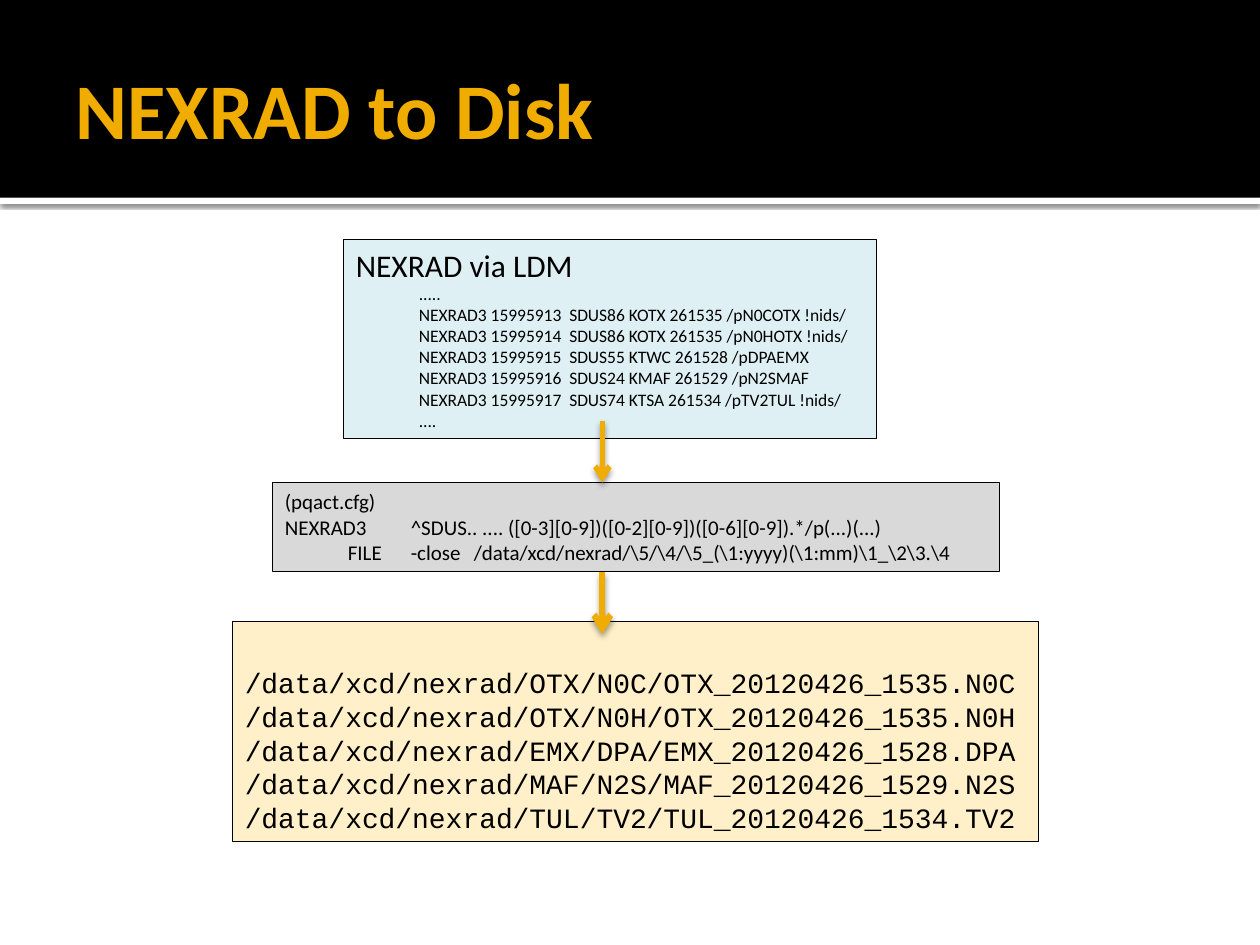
from dataclasses import dataclass

from lxml.etree import SubElement
from pptx import Presentation
from pptx.dml.color import RGBColor
from pptx.enum.shapes import MSO_CONNECTOR as Connector, MSO_SHAPE as Shape
from pptx.enum.text import MSO_ANCHOR as Anchor, MSO_AUTO_SIZE as AutoSize, PP_ALIGN as Align
from pptx.oxml.ns import qn
from pptx.util import Pt

COLORS = {
    "black": "000000",
    "white": "FFFFFF",
    "gold": "F0AD00",
    "feed": "DFF0F5",
    "config": "D9D9D9",
    "disk": "FFF0C9",
}


@dataclass(frozen=True)
class Line:
    text: str
    size: float
    font: str = "Calibri"
    indent: float = 0


@dataclass(frozen=True)
class Stage:
    left: float
    top: float
    width: float
    height: float
    color: str
    lines: list[Line]
    top_inset: float = 3.6
    tabs: tuple[float, ...] = ()


@dataclass(frozen=True)
class Flow:
    x: float
    top: float
    bottom: float
    weight: float


@dataclass(frozen=True)
class Shadow:
    opacity: int
    blur: float
    distance: float


def rgb(name: str) -> RGBColor:
    return RGBColor.from_string(COLORS[name])


def add_shadow(sp_pr, shadow: Shadow) -> None:
    effects = sp_pr.find(qn("a:effectLst"))
    if effects is None:
        effects = SubElement(sp_pr, qn("a:effectLst"))
    outer = SubElement(effects, qn("a:outerShdw"), blurRad=str(Pt(shadow.blur)),
                       dist=str(Pt(shadow.distance)), dir="5400000", rotWithShape="0")
    color = SubElement(outer, qn("a:srgbClr"), val=COLORS["black"])
    SubElement(color, qn("a:alpha"), val=str(shadow.opacity * 1000))


def add_rect(slide, left: float, top: float, width: float, height: float, color: str):
    rect = slide.shapes.add_shape(Shape.RECTANGLE, Pt(left), Pt(top), Pt(width), Pt(height))
    rect.shadow.inherit = False
    rect.fill.solid()
    rect.fill.fore_color.rgb = rgb(color)
    rect.line.fill.background()
    return rect


def add_run(paragraph, text: str, size: float, color: str, font: str = "Calibri", bold: bool = False) -> None:
    run = paragraph.add_run()
    run.text = text
    run.font.name = font
    run.font.size = Pt(size)
    run.font.bold = bold
    run.font.color.rgb = rgb(color)


def add_stage(slide, stage: Stage) -> None:
    box = add_rect(slide, stage.left, stage.top, stage.width, stage.height, stage.color)
    box.line.color.rgb = rgb("black")
    box.line.width = Pt(0.75)
    frame = box.text_frame
    frame.word_wrap = True
    frame.vertical_anchor = Anchor.TOP
    frame.margin_left = frame.margin_right = Pt(7.2)
    frame.margin_top, frame.margin_bottom = Pt(stage.top_inset), Pt(3.6)
    for index, line in enumerate(stage.lines):
        paragraph = frame.add_paragraph() if index else frame.paragraphs[0]
        paragraph.alignment = Align.LEFT
        properties = paragraph._p.get_or_add_pPr()
        if line.indent:
            paragraph.level = 1
            properties.set("marL", str(Pt(line.indent)))
            properties.set("indent", "0")
        if stage.tabs:
            stops = SubElement(properties, qn("a:tabLst"))
            for position in stage.tabs:
                SubElement(stops, qn("a:tab"), pos=str(Pt(position)), algn="l")
        add_run(paragraph, line.text, line.size, "black", line.font)


def add_flow(slide, flow: Flow) -> None:
    arrow = slide.shapes.add_connector(
        Connector.STRAIGHT, Pt(flow.x), Pt(flow.top), Pt(flow.x), Pt(flow.bottom))
    arrow.line.color.rgb = rgb("gold")
    arrow.line.width = Pt(flow.weight)
    sp_pr = arrow.element.spPr
    SubElement(sp_pr.find(qn("a:ln")), qn("a:tailEnd"), type="arrow")
    add_shadow(sp_pr, Shadow(38, 3.5, 2))


def add_header(slide, text: str) -> None:
    rule = add_rect(slide, 0, 113, 720, 3.6, "white")
    add_shadow(rule.element.spPr, Shadow(60, 2.5, 0.8))
    add_rect(slide, 0, 0, 720, 113, "black")
    title = slide.shapes.title
    title.element.getparent().append(title.element)
    title.left, title.top, title.width, title.height = Pt(36), Pt(12.24), Pt(648), Pt(98.64)
    frame = title.text_frame
    frame.auto_size = AutoSize.NONE
    frame.vertical_anchor = Anchor.MIDDLE
    frame.margin_left = Pt(7.2)
    frame.margin_top = frame.margin_right = frame.margin_bottom = Pt(3.6)
    frame.paragraphs[0].alignment = Align.LEFT
    add_run(frame.paragraphs[0], text, 45, "gold", bold=True)


FEED = [
    ".....",
    "NEXRAD3 15995913  SDUS86 KOTX 261535 /pN0COTX !nids/",
    "NEXRAD3 15995914  SDUS86 KOTX 261535 /pN0HOTX !nids/",
    "NEXRAD3 15995915  SDUS55 KTWC 261528 /pDPAEMX",
    "NEXRAD3 15995916  SDUS24 KMAF 261529 /pN2SMAF",
    "NEXRAD3 15995917  SDUS74 KTSA 261534 /pTV2TUL !nids/",
    "....",
]
CONFIG = [
    "(pqact.cfg)",
    "NEXRAD3\t^SDUS.. .... ([0-3][0-9])([0-2][0-9])([0-6][0-9]).*/p(...)(...)",
    "\tFILE\t-close\t/data/xcd/nexrad/\\5/\\4/\\5_(\\1:yyyy)(\\1:mm)\\1_\\2\\3.\\4",
]
FILES = [
    "/data/xcd/nexrad/OTX/N0C/OTX_20120426_1535.N0C",
    "/data/xcd/nexrad/OTX/N0H/OTX_20120426_1535.N0H",
    "/data/xcd/nexrad/EMX/DPA/EMX_20120426_1528.DPA",
    "/data/xcd/nexrad/MAF/N2S/MAF_20120426_1529.N2S",
    "/data/xcd/nexrad/TUL/TV2/TUL_20120426_1534.TV2",
]
STAGES = [
    Stage(196.2, 136.8, 304.8, 113.9, "feed",
          [Line("NEXRAD via LDM", 18)] + [Line(text, 10, indent=36) for text in FEED]),
    Stage(132.8, 355, 460.8, 126, "disk",
          [Line(text, 16, "Courier New") for text in FILES], top_inset=25.5),
    Stage(155.7, 275.8, 415.5, 50.8, "config",
          [Line(text, 12) for text in CONFIG], tabs=(36, 72, 108)),
]
FLOWS = [Flow(344.2, 240.5, 275.8, 3), Flow(344.2, 326.9, 362.2, 3.5)]


def main() -> None:
    deck = Presentation()
    deck.slide_width, deck.slide_height = Pt(720), Pt(540)
    slide = deck.slides.add_slide(deck.slide_layouts.get_by_name("Title Only"))
    add_header(slide, "NEXRAD to Disk")
    for stage in STAGES:
        add_stage(slide, stage)
    for flow in FLOWS:
        add_flow(slide, flow)
    deck.save("out.pptx")


if __name__ == "__main__":
    main()
